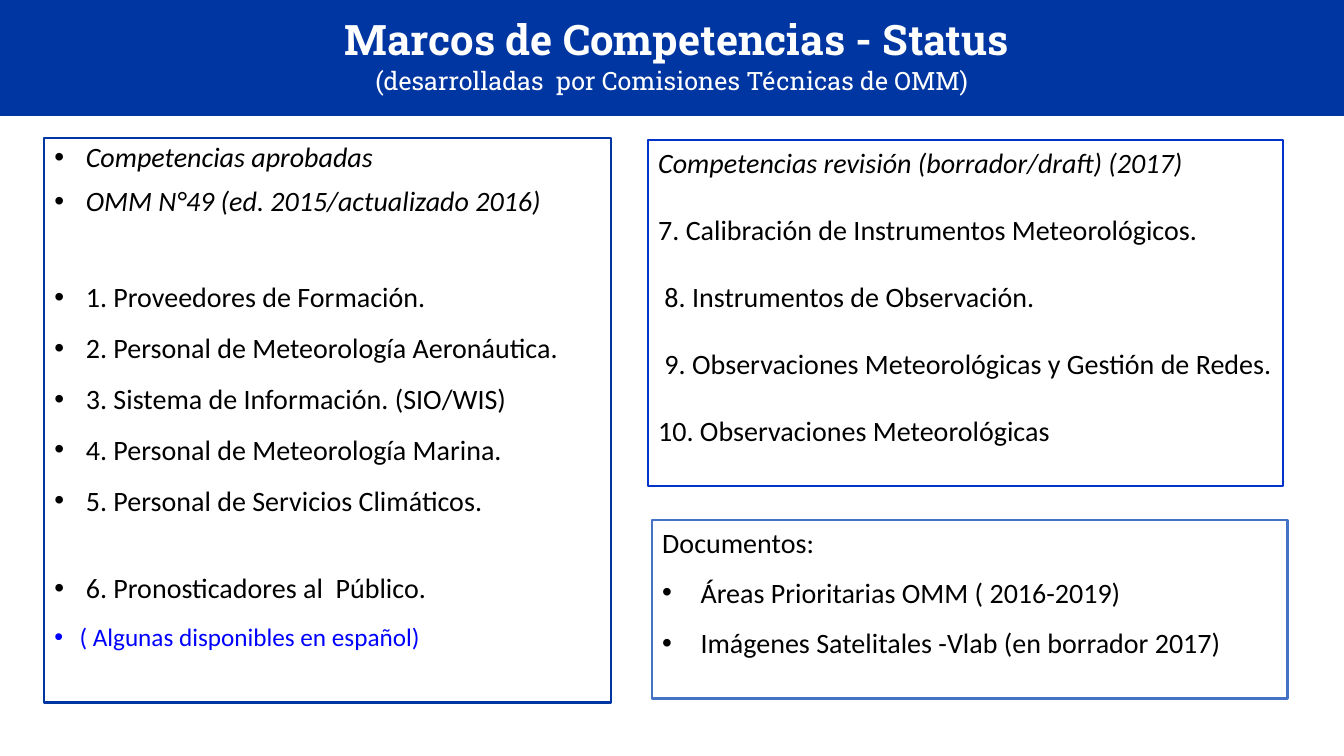
from dataclasses import dataclass

from lxml import etree
from pptx import Presentation
from pptx.dml.color import RGBColor
from pptx.enum.shapes import MSO_SHAPE as SHAPE
from pptx.enum.text import MSO_ANCHOR as ANCHOR, PP_ALIGN as ALIGN
from pptx.oxml.ns import qn
from pptx.slide import Slide
from pptx.util import Inches, Pt

COLORS = {
    "white": "FFFFFF",
    "black": "000000",
    "navy": "0036A2",
    "royal": "0033CC",
    "steel": "4472C4",
    "note": "0000FF",
}


@dataclass
class Line:
    text: str
    size: float = 20
    before: float = 0
    spacing: float = 1.0
    indent: float = 0  # inches; a bullet hangs in any indent
    color: str = "black"
    font: str = "Calibri"
    bold: bool = False
    italic: bool = False


@dataclass
class Panel:
    box: tuple[float, float, float, float]
    fill: str
    border: str | None
    lines: list[Line]
    align: ALIGN = ALIGN.LEFT
    anchor: ANCHOR = ANCHOR.TOP


def rgb(name: str) -> RGBColor:
    return RGBColor.from_string(COLORS[name])


def add_bullet(p, indent: float) -> None:
    pPr = p._p.get_or_add_pPr()
    pPr.set("marL", str(Inches(indent)))
    pPr.set("indent", str(-Inches(indent)))
    etree.SubElement(pPr, qn("a:buFont")).set("typeface", "Arial")
    etree.SubElement(pPr, qn("a:buChar")).set("char", "•")


def add_panel(s: Slide, panel: Panel) -> None:
    sp = s.shapes.add_shape(SHAPE.RECTANGLE, *map(Inches, panel.box))
    sp.shadow.inherit = False
    sp.fill.solid()
    sp.fill.fore_color.rgb = rgb(panel.fill)
    if panel.border:
        sp.line.color.rgb = rgb(panel.border)
        sp.line.width = Pt(1.5)
    else:
        sp.line.fill.background()

    tf = sp.text_frame
    tf.word_wrap = True
    tf.vertical_anchor = panel.anchor
    tf.margin_right = Inches(0.05 if panel.align == ALIGN.LEFT else 0.1)
    for i, line in enumerate(panel.lines):
        p = tf.add_paragraph() if i else tf.paragraphs[0]
        p.alignment = panel.align
        p.line_spacing = line.spacing
        p.space_before = Pt(line.before)
        if line.indent:
            add_bullet(p, line.indent)
        r = p.add_run()
        r.text = line.text
        r.font.name = line.font
        r.font.size = Pt(line.size)
        r.font.bold = line.bold
        r.font.italic = line.italic
        r.font.color.rgb = rgb(line.color)


def approved(text: str, before: float = 10, **style) -> Line:
    return Line(text, before=before, indent=0.25, **{"spacing": 1.1, **style})


def heading(text: str, size: float, bold: bool = False) -> Line:
    return Line(text, size, 3, 0.9, color="white", font="Roboto Slab", bold=bold)


# Title band
title = Panel((0, 0, 13.33, 1.15), "navy", None, [
    heading(" Marcos de Competencias - Status", 30, bold=True),
    heading("(desarrolladas  por Comisiones Técnicas de OMM)", 18),
], ALIGN.CENTER, ANCHOR.MIDDLE)

# Approved competencies
approved_panel = Panel((0.44, 1.37, 5.62, 5.6), "white", "navy", [
    approved(" Competencias aprobadas", 0, spacing=0.9, italic=True),
    approved(" OMM N°49 (ed. 2015/actualizado 2016)", spacing=0.9, italic=True),
    approved(" 1. Proveedores de Formación.", 42),
    approved(" 2. Personal de Meteorología Aeronáutica."),
    approved(" 3. Sistema de Información. (SIO/WIS)"),
    approved(" 4. Personal de Meteorología Marina."),
    approved(" 5. Personal de Servicios Climáticos."),
    approved(" 6. Pronosticadores al  Público.", 36),
    approved("( Algunas disponibles en español)", size=18, color="note"),
])

# Competencies under review
review_panel = Panel((6.43, 1.39, 6.3, 3.43), "white", "royal", [
    Line("Competencias revisión (borrador/draft) (2017)", italic=True),
    Line("7. Calibración de Instrumentos Meteorológicos.", before=24),
    Line(" 8. Instrumentos de Observación.", before=24),
    Line(" 9. Observaciones Meteorológicas y Gestión de Redes.", before=24),
    Line("10. Observaciones Meteorológicas", before=24),
])

# Documents
documents_panel = Panel((6.47, 5.16, 6.3, 1.77), "white", "steel", [
    Line("Documentos:"),
    Line("Áreas Prioritarias OMM ( 2016-2019)", before=12, indent=0.38),
    Line("Imágenes Satelitales -Vlab (en borrador 2017)", before=12, indent=0.38),
])


def main() -> None:
    prs = Presentation()
    prs.slide_width, prs.slide_height = Inches(13.33), Inches(7.5)
    s = prs.slides.add_slide(prs.slide_layouts[6])
    for panel in (title, approved_panel, review_panel, documents_panel):
        add_panel(s, panel)
    prs.save("out.pptx")


if __name__ == "__main__":
    main()
